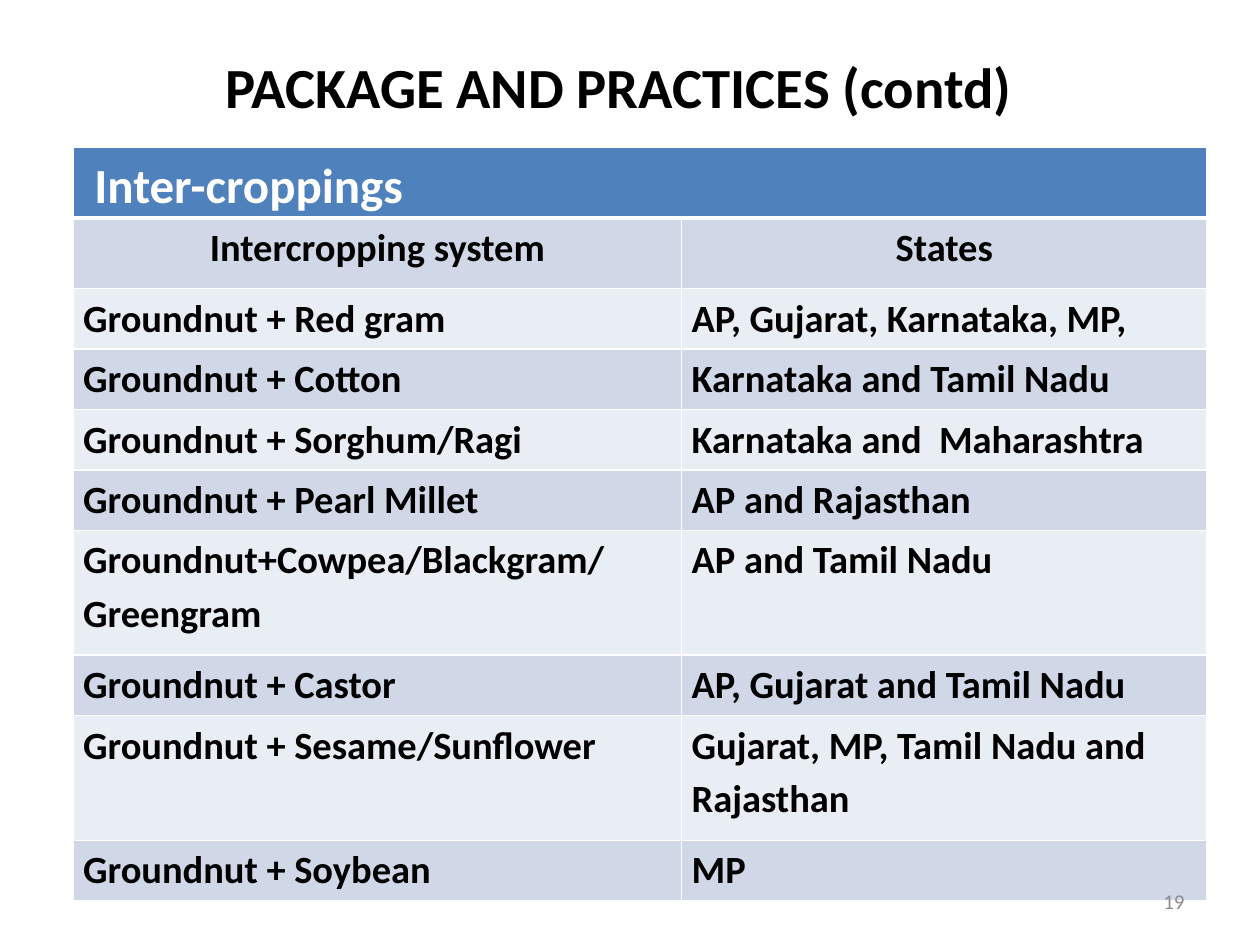
from lxml import etree
from pptx import Presentation
from pptx.dml.color import RGBColor
from pptx.enum.text import MSO_ANCHOR, PP_ALIGN
from pptx.oxml.ns import qn
from pptx.util import Inches, Pt

LEFT, CENTER, RIGHT = PP_ALIGN.LEFT, PP_ALIGN.CENTER, PP_ALIGN.RIGHT
TOP, MIDDLE = MSO_ANCHOR.TOP, MSO_ANCHOR.MIDDLE

BLACK = RGBColor(0x00, 0x00, 0x00)
WHITE = RGBColor(0xFF, 0xFF, 0xFF)
GRAY = RGBColor(0x8C, 0x8C, 0x8C)
HEADER_BLUE = RGBColor(0x4F, 0x81, 0xBD)
BAND_DARK = RGBColor(0xD0, 0xD8, 0xE8)
BAND_LIGHT = RGBColor(0xE9, 0xED, 0xF4)

COLUMN_WIDTHS = [4.83, 4.17]
ROW_HEIGHTS = [0.56, 0.56, 0.48, 0.48, 0.48, 0.48, 0.99, 0.48, 0.99, 0.48]
ROWS = [
    ("Inter-croppings", ""),
    ("Intercropping system", "States"),
    ("Groundnut + Red gram", "AP, Gujarat, Karnataka, MP,"),
    ("Groundnut + Cotton", "Karnataka and Tamil Nadu"),
    ("Groundnut + Sorghum/Ragi", "Karnataka and  Maharashtra"),
    ("Groundnut + Pearl Millet", "AP and Rajasthan"),
    ("Groundnut+Cowpea/Blackgram/\nGreengram", "AP and Tamil Nadu"),
    ("Groundnut + Castor", "AP, Gujarat and Tamil Nadu"),
    ("Groundnut + Sesame/Sunflower", "Gujarat, MP, Tamil Nadu and Rajasthan"),
    ("Groundnut + Soybean", "MP"),
]


def write(frame, text, align, spacing, color, **font_format):
    frame.text = text
    frame.word_wrap = True
    for para in frame.paragraphs:
        para.alignment = align
        para.line_spacing = spacing
        for span in para.runs:
            span.font.color.rgb = color
            for name, value in {"name": "Calibri", **font_format}.items():
                setattr(span.font, name, value)


def add_borders(cell, widths):
    """Draw white cell borders; widths are points for left, right, top, bottom."""
    properties = cell._tc.get_or_add_tcPr()
    for index, (side, width) in enumerate(zip("LRTB", widths)):
        line = etree.Element(qn(f"a:ln{side}"), w=str(Pt(width)))
        fill = etree.SubElement(line, qn("a:solidFill"))
        etree.SubElement(fill, qn("a:srgbClr"), val=str(WHITE))
        properties.insert(index, line)


deck = Presentation()
deck.slide_width, deck.slide_height = Inches(10), Inches(7.5)
page = deck.slides.add_slide(deck.slide_layouts[6])

title = page.shapes.add_textbox(Inches(0.17), Inches(0.3), Inches(9.58), Inches(1.25))
title_frame = title.text_frame
write(title_frame, "PACKAGE AND PRACTICES (contd)", CENTER, 1.0, BLACK,
      size=Pt(32.4), bold=True)
title_frame.vertical_anchor = TOP
title_frame.margin_top = Inches(0.11)
title_frame.margin_right = Inches(0.2)

table = page.shapes.add_table(len(ROWS), len(COLUMN_WIDTHS), Inches(0.58), Inches(1.17),
                              Inches(9), Inches(6)).table
for column, width in zip(table.columns, COLUMN_WIDTHS):
    column.width = Inches(width)
for row, height in zip(table.rows, ROW_HEIGHTS):
    row.height = Inches(height)
table.cell(0, 0).merge(table.cell(0, 1))

for row_index, texts in enumerate(ROWS):
    is_header = row_index == 0
    band = BAND_DARK if row_index % 2 else BAND_LIGHT
    for column_index, text in enumerate(texts):
        cell = table.cell(row_index, column_index)
        cell.margin_left = Inches(0.17 if is_header else 0.08)
        cell.margin_right = Inches(0.08)
        cell.margin_top = cell.margin_bottom = 0
        cell.fill.solid()
        cell.fill.fore_color.rgb = HEADER_BLUE if is_header else band
        write(cell.text_frame, text, CENTER if row_index == 1 else LEFT, 1.15,
              WHITE if is_header else BLACK, size=Pt(28 if is_header else 22), bold=True)
        add_borders(cell, (1, 1, 3 if row_index == 1 else 1, 3 if is_header else 1))

number = page.shapes.add_textbox(Inches(7.17), Inches(6.95), Inches(2.33), Inches(0.4))
write(number.text_frame, "19", RIGHT, 1.0, GRAY, size=Pt(12))
number.text_frame.vertical_anchor = MIDDLE

deck.save("out.pptx")
